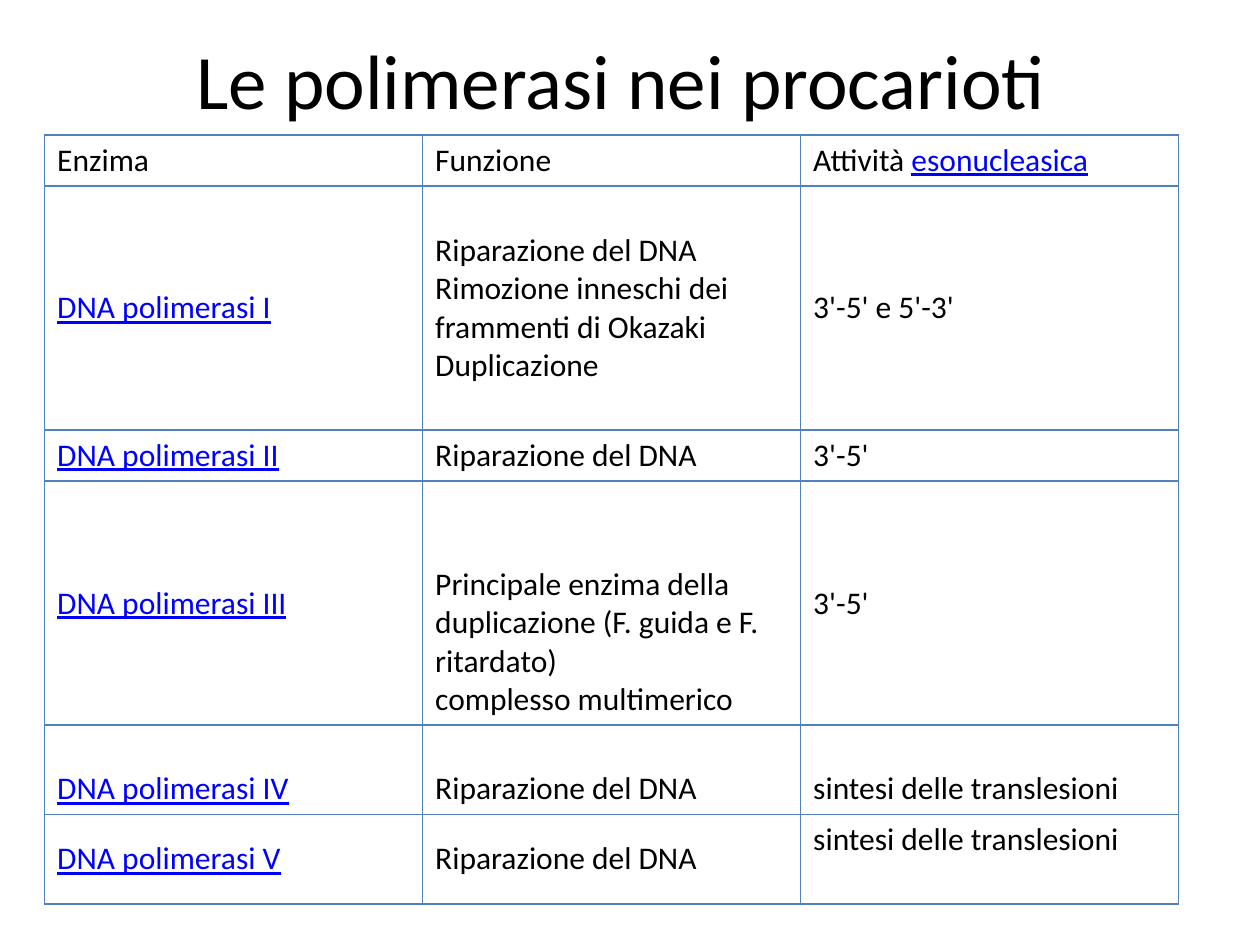
from dataclasses import dataclass

from lxml.etree import SubElement
from pptx import Presentation
from pptx.dml.color import RGBColor
from pptx.enum.text import MSO_ANCHOR as Anchor, PP_ALIGN as Align
from pptx.oxml.ns import qn
from pptx.util import Cm, Pt


@dataclass(frozen=True)
class Theme:
    font: str = "Calibri"
    title_size: int = 44
    body_size: int = 18
    text: str = "000000"
    link: str = "0000FF"
    border: str = "4F81BD"
    border_width: int = 1


THEME = Theme()
TITLE = "Le polimerasi nei procarioti"
REPAIR = "Riparazione del DNA"
TRANSLESION = "sintesi delle translesioni"

# Each cell is a list of lines; underscores enclose underlined terms
ROWS = [
    (["Enzima"], ["Funzione"], ["Attività _esonucleasica_"]),
    (["_DNA polimerasi I_"],
     [REPAIR, "Rimozione inneschi dei frammenti di Okazaki", "Duplicazione"],
     ["3'-5' e 5'-3'"]),
    (["_DNA polimerasi II_"], [REPAIR], ["3'-5'"]),
    (["_DNA polimerasi III_"],
     ["Principale enzima della duplicazione (F. guida e F. ritardato)",
      "complesso multimerico"],
     ["3'-5'"]),
    (["_DNA polimerasi IV_"], [REPAIR], [TRANSLESION]),
    (["_DNA polimerasi V_"], [REPAIR], [TRANSLESION]),
]
ROW_HEIGHTS = [1.03, 4.92, 1.03, 4.92, 1.8, 1.8]
# Cells that are not centred vertically, by (row, column)
ANCHORS = {(3, 1): Anchor.BOTTOM, (5, 2): Anchor.TOP,
           **{(4, column): Anchor.BOTTOM for column in range(3)}}


def style_font(font, size):
    font.name = THEME.font
    font.size = Pt(size)
    font.bold = False
    font.color.rgb = RGBColor.from_string(THEME.text)


def add_title(slide, left, top, width, height):
    title = slide.shapes.title
    title.left, title.top, title.width, title.height = left, top, width, height
    title.text_frame.vertical_anchor = Anchor.MIDDLE
    title.text_frame.text = TITLE
    paragraph = title.text_frame.paragraphs[0]
    paragraph.alignment = Align.CENTER
    style_font(paragraph.font, THEME.title_size)


def set_borders(cell):
    properties = cell._tc.get_or_add_tcPr()
    for position, side in enumerate(("a:lnL", "a:lnR", "a:lnT", "a:lnB")):
        line = SubElement(properties, qn(side), w=str(Pt(THEME.border_width)))
        fill = SubElement(line, qn("a:solidFill"))
        SubElement(fill, qn("a:srgbClr"), val=THEME.border)
        properties.insert(position, line)


def write_line(paragraph, line):
    style_font(paragraph.font, THEME.body_size)
    for index, part in enumerate(line.split("_")):
        if not part:
            continue
        run = paragraph.add_run()
        run.text = part
        style_font(run.font, THEME.body_size)
        if index % 2:
            run.font.underline = True
            run.font.color.rgb = RGBColor.from_string(THEME.link)


def fill_cell(cell, lines, anchor):
    cell.fill.background()
    set_borders(cell)
    cell.vertical_anchor = anchor
    frame = cell.text_frame
    for index, line in enumerate(lines):
        paragraph = frame.add_paragraph() if index else frame.paragraphs[0]
        write_line(paragraph, line)


def add_enzyme_table(slide, left, top, width):
    frame = slide.shapes.add_table(len(ROWS), len(ROWS[0]), left, top, width,
                                   Cm(sum(ROW_HEIGHTS)))
    table = frame.table
    table.first_row = table.horz_banding = False
    for row, height in zip(table.rows, ROW_HEIGHTS):
        row.height = Cm(height)
    for row, cells in enumerate(ROWS):
        for column, lines in enumerate(cells):
            fill_cell(table.cell(row, column), lines,
                      ANCHORS.get((row, column), Anchor.MIDDLE))


def main():
    presentation = Presentation()
    presentation.slide_width, presentation.slide_height = Cm(25.4), Cm(19.05)
    title_only = presentation.slide_layouts[5]
    slide = presentation.slides.add_slide(title_only)
    add_title(slide, Cm(1.09), Cm(0), Cm(22.86), Cm(3.18))
    add_enzyme_table(slide, Cm(0.9), Cm(2.72), Cm(22.86))
    presentation.save("out.pptx")


if __name__ == "__main__":
    main()
